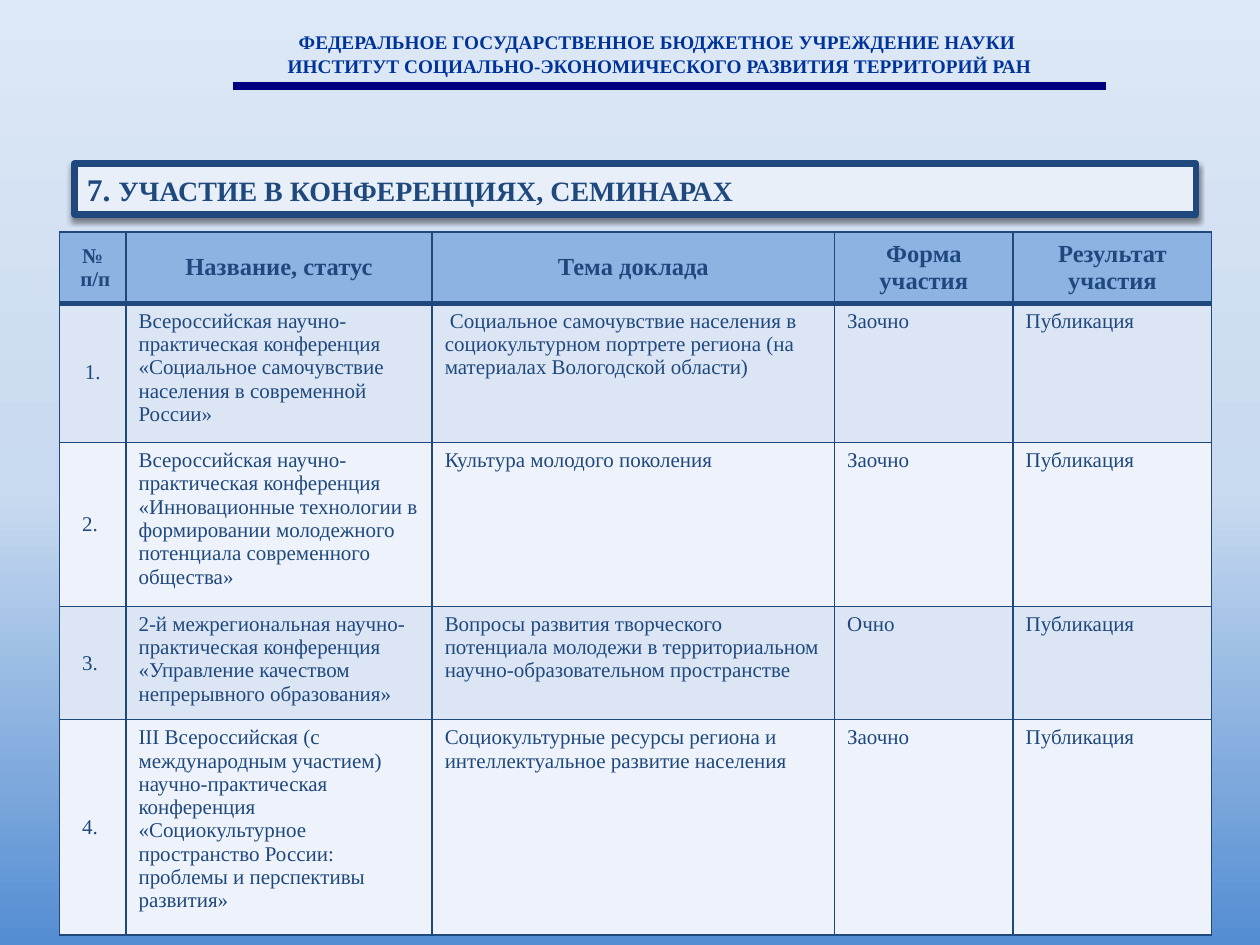
"""Build the slide listing conference and seminar participation."""
from copy import deepcopy
from dataclasses import dataclass

from lxml import etree
from pptx import Presentation
from pptx.dml.color import RGBColor
from pptx.enum import shapes, text
from pptx.oxml.ns import qn
from pptx.util import Pt

FONT = "Times New Roman"
COLORS = {
    "navy": "000080", "header": "003399", "ink": "1F497D", "title": "E8EFF9",
    "head": "8DB3E2", "odd": "DBE5F4", "even": "EEF2FA", "shadow": "000000",
}
BACKGROUND = [(0, "548DD2"), (0.48, "C8DAF0"), (1, "DDE8F6")]
CENTER = text.PP_ALIGN.CENTER
MIDDLE = text.MSO_ANCHOR.MIDDLE
COLUMNS = [38, 175, 230, 102, 113.5]


@dataclass
class Row:
    height: float
    cells: list[str]


HEADER = Row(40.5, ["№\n п/п", "Название, статус", "Тема доклада",
                    "Форма участия", "Результат участия"])
ROWS = [
    Row(79.5, ["1.", "Всероссийская научно-практическая конференция «Социальное самочувствие "
               "населения в современной России»",
               " Социальное самочувствие населения в социокультурном портрете региона "
               "(на материалах Вологодской области)", "Заочно", "Публикация"]),
    Row(93.5, ["2. ", "Всероссийская научно-практическая конференция «Инновационные технологии "
               "в формировании молодежного потенциала современного общества»",
               "Культура молодого поколения", "Заочно", "Публикация"]),
    Row(64.5, ["3. ", "2-й межрегиональная научно-практическая конференция «Управление "
               "качеством непрерывного образования»",
               "Вопросы развития творческого потенциала молодежи в территориальном "
               "научно-образовательном пространстве", "Очно", "Публикация"]),
    Row(123, ["4. ", "III Всероссийская (с международным участием) научно-практическая "
              "конференция «Социокультурное пространство России: проблемы и перспективы развития»",
              "Социокультурные ресурсы региона и интеллектуальное развитие населения",
              "Заочно", "Публикация"]),
]


def rgb(name: str) -> RGBColor:
    """Return a palette colour."""
    return RGBColor.from_string(COLORS[name])


def add_run(p, content: str, *, size: float, color: str = "ink", bold: bool = False) -> None:
    """Append a formatted run to a paragraph."""
    r = p.add_run()
    r.text = content
    r.font.name, r.font.size, r.font.bold = FONT, Pt(size), bold
    r.font.color.rgb = rgb(color)


def write(tf, content: str, *, align=None, **style) -> None:
    """Write each line of the content as one formatted paragraph."""
    for i, line in enumerate(content.split("\n")):
        p = tf.paragraphs[0] if i == 0 else tf.add_paragraph()
        p.alignment = align
        add_run(p, line, **style)


def paint_background(s) -> None:
    """Fill the slide with the vertical three-stop gradient."""
    fill = s.background.fill
    fill.gradient()
    fill.gradient_angle = 90
    stops = s.element.find(f".//{qn('a:gsLst')}")
    stops.append(deepcopy(stops[0]))
    for stop, (position, color) in zip(fill.gradient_stops, BACKGROUND):
        stop.position = position
        stop.color.rgb = RGBColor.from_string(color)


def add_page_header(s) -> None:
    """Add the institute name and the rule below it."""
    sp = s.shapes.add_connector(shapes.MSO_CONNECTOR.STRAIGHT, Pt(133), Pt(49), Pt(632), Pt(49))
    sp.line.color.rgb, sp.line.width = rgb("navy"), Pt(4.5)
    etree.SubElement(sp.element.spPr, qn("a:effectLst"))
    tf = s.shapes.add_textbox(Pt(82), Pt(15), Pt(590), Pt(32.5)).text_frame
    tf.word_wrap, tf.vertical_anchor = True, text.MSO_ANCHOR.BOTTOM
    write(tf, "ФЕДЕРАЛЬНОЕ ГОСУДАРСТВЕННОЕ БЮДЖЕТНОЕ УЧРЕЖДЕНИЕ НАУКИ \n"
              "ИНСТИТУТ СОЦИАЛЬНО-ЭКОНОМИЧЕСКОГО РАЗВИТИЯ ТЕРРИТОРИЙ РАН",
          align=CENTER, size=11, color="header", bold=True)


def format_title(sp) -> None:
    """Place and style the section title with its soft shadow."""
    sp.left, sp.top, sp.width, sp.height = Pt(42.5), Pt(93.5), Pt(641), Pt(29)
    sp.fill.solid()
    sp.fill.fore_color.rgb = rgb("title")
    sp.line.color.rgb, sp.line.width = rgb("ink"), Pt(3.75)
    effects = etree.SubElement(sp.element.spPr, qn("a:effectLst"))
    shadow = etree.SubElement(effects, qn("a:outerShdw"), blurRad=str(Pt(3)),
                              dist=str(Pt(2.4)), dir="5400000", rotWithShape="0")
    color = etree.SubElement(shadow, qn("a:srgbClr"), val=COLORS["shadow"])
    etree.SubElement(color, qn("a:alpha"), val="45000")
    tf = sp.text_frame
    tf.auto_size, tf.vertical_anchor = text.MSO_AUTO_SIZE.NONE, MIDDLE
    p = tf.paragraphs[0]
    p.alignment = text.PP_ALIGN.JUSTIFY
    add_run(p, "7. ", size=18, bold=True)
    add_run(p, "УЧАСТИЕ В КОНФЕРЕНЦИЯХ, СЕМИНАРАХ", size=16, bold=True)


def style_cell(cell, fill: str, *, top: float = 1, bottom: float = 1) -> None:
    """Give a cell its borders and fill."""
    tc_pr = cell._tc.get_or_add_tcPr()
    for side, width in {"L": 1, "R": 1, "T": top, "B": bottom}.items():
        ln = etree.SubElement(tc_pr, qn(f"a:ln{side}"), w=str(Pt(width)))
        solid = etree.SubElement(ln, qn("a:solidFill"))
        etree.SubElement(solid, qn("a:srgbClr"), val=COLORS["ink"])
    cell.fill.solid()
    cell.fill.fore_color.rgb = rgb(fill)


def add_conference_table(s) -> None:
    """Add the table of conferences."""
    rows = [HEADER, *ROWS]
    table = s.shapes.add_table(len(rows), len(COLUMNS), Pt(34), Pt(132.5), Pt(sum(COLUMNS)),
                               Pt(sum(row.height for row in rows))).table
    for column, width in zip(table.columns, COLUMNS):
        column.width = Pt(width)
    for i, row in enumerate(rows):
        table.rows[i].height = Pt(row.height)
        head = i == 0
        fill = "head" if head else ("odd" if i % 2 else "even")
        for j, content in enumerate(row.cells):
            cell = table.cell(i, j)
            style_cell(cell, fill, top=3 if i == 1 else 1, bottom=3 if head else 1)
            centered = head or j == 0
            cell.vertical_anchor = MIDDLE if centered else text.MSO_ANCHOR.TOP
            write(cell.text_frame, content, align=CENTER if centered else None,
                  size=14 if head and j else 12, bold=head)


def main() -> None:
    """Build and save the presentation."""
    prs = Presentation()
    prs.slide_width, prs.slide_height = Pt(720), Pt(540)
    s = prs.slides.add_slide(prs.slide_layouts[5])
    paint_background(s)
    add_page_header(s)
    format_title(s.shapes.title)
    add_conference_table(s)
    prs.save("out.pptx")


if __name__ == "__main__":
    main()
